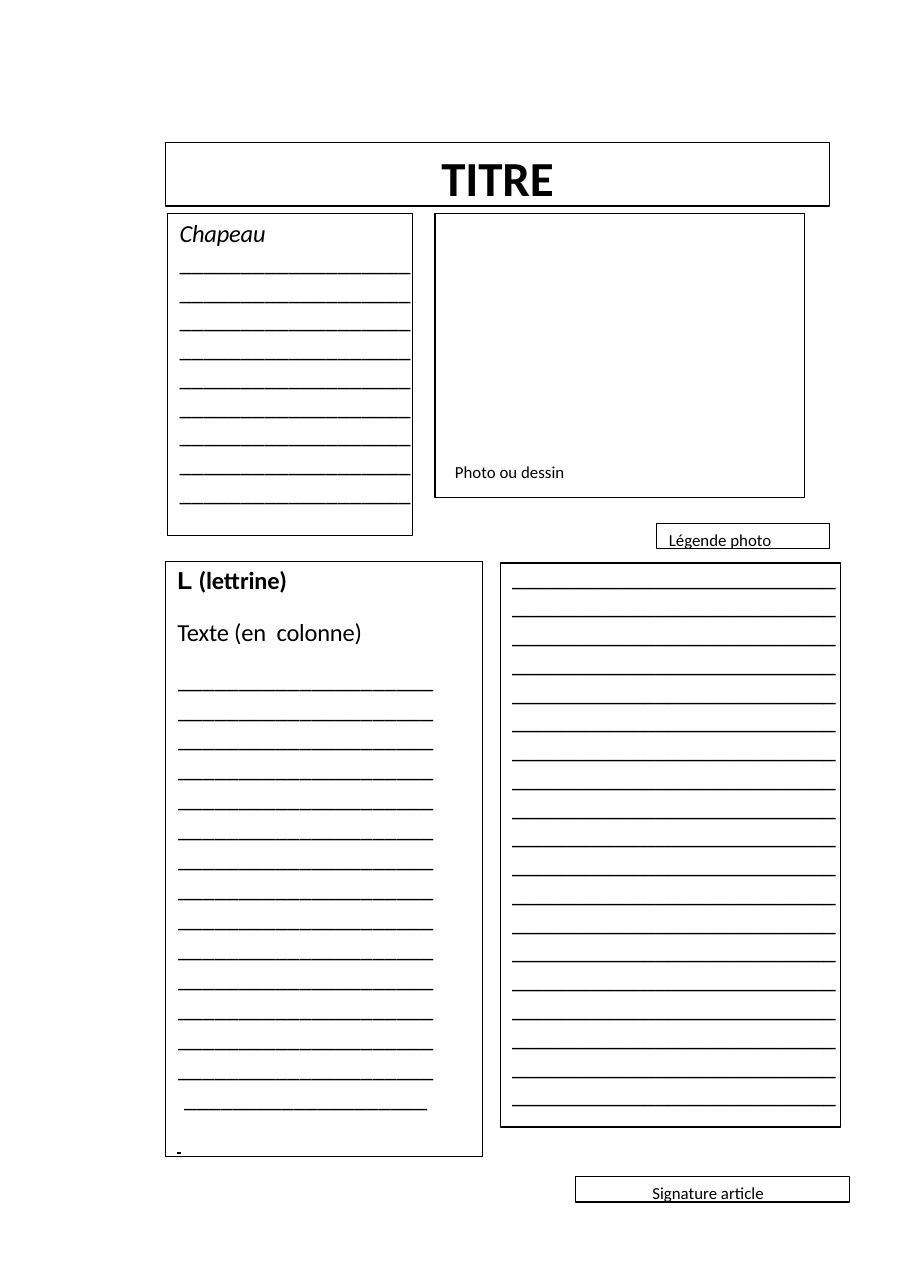
from lxml.etree import SubElement
from pptx import Presentation
from pptx.dml.color import RGBColor
from pptx.enum.shapes import MSO_SHAPE
from pptx.enum.text import MSO_ANCHOR, MSO_AUTO_SIZE, PP_ALIGN
from pptx.oxml.ns import qn
from pptx.util import Cm, Pt

BLACK = RGBColor(0, 0, 0)
EDGE = Pt(0.75)
PAD = 0.28


def put(para, text, size=16, font="Calibri", bold=False, italic=False,
        under=False, track=0, align=PP_ALIGN.LEFT, before=0, lead=1.0):
    """Add a run of text to a paragraph and format both."""
    para.alignment = align
    para.space_before = Pt(before)
    para.line_spacing = lead
    run = para.add_run()
    run.text = text
    face = run.font
    face.name, face.size = font, Pt(size)
    face.bold, face.italic, face.underline = bold, italic, under
    face.color.rgb = BLACK
    run._r.get_or_add_rPr().set("spc", str(track))
    return run


def prep(shape, left=0, top=0):
    """Set up the text frame of a shape and return its first paragraph."""
    frame = shape.text_frame
    frame.word_wrap = True
    frame.auto_size = MSO_AUTO_SIZE.NONE
    frame.vertical_anchor = MSO_ANCHOR.TOP
    frame.margin_left, frame.margin_top = Cm(left), Cm(top)
    frame.margin_right = frame.margin_bottom = 0
    return frame.paragraphs[0]


def edge(shape):
    """Give a shape a thin black outline and no fill."""
    shape.fill.background()
    shape.line.color.rgb = BLACK
    shape.line.width = EDGE


def frame_box(slide, box, left=0, top=0):
    """Draw an outlined box and return its first paragraph."""
    shape = slide.shapes.add_shape(MSO_SHAPE.RECTANGLE, *map(Cm, box))
    shape.shadow.inherit = False
    edge(shape)
    return prep(shape, left, top)


def headline(slide, box):
    """Place the title across the top."""
    title = slide.shapes.title
    title.left, title.top, title.width, title.height = map(Cm, box)
    edge(title)
    put(prep(title, top=0.13), "TITRE", size=32, bold=True, track=-10,
        align=PP_ALIGN.CENTER, before=3.2)


def intro(slide, box):
    """Place the lead paragraph with its writing lines."""
    para = frame_box(slide, box, PAD, 0.13)
    style = dict(before=3.4, lead=0.98)
    put(para, "Chapeau ", italic=True, track=-10, **style)
    put(para, "_" * 19 * 9, **style)


def photo(slide, box):
    """Place the picture frame and the label near its bottom."""
    left, top, _, _ = box
    frame_box(slide, box)
    label = slide.shapes.add_textbox(
        Cm(left + 0.46), Cm(top + 5.69), Cm(3.23), Cm(0.51))
    put(prep(label, top=0.03), "Photo ou dessin", size=11, before=1)


def caption(slide, box, text, left=PAD):
    """Place a small outlined label."""
    put(frame_box(slide, box, left, 0.13), text, size=11, before=3.4)


def rule_cell(cell):
    """Draw the four borders of a cell."""
    props = cell._tc.get_or_add_tcPr()
    for spot, side in enumerate("LRTB"):
        line = props.makeelement(qn(f"a:ln{side}"), {"w": str(EDGE)})
        fill = SubElement(line, qn("a:solidFill"))
        SubElement(fill, qn("a:srgbClr"), val=str(BLACK))
        props.insert(spot, line)


def story(slide, box):
    """Place the first text column as a table of one cell."""
    table = slide.shapes.add_table(1, 1, *map(Cm, box)).table
    table.first_row = table.horz_banding = False
    cell = table.cell(0, 0)
    cell.fill.background()
    rule_cell(cell)
    cell.margin_left, cell.margin_right = Cm(PAD), Cm(1.12)
    cell.margin_top, cell.margin_bottom = Cm(0.1), 0
    frame = cell.text_frame
    head = frame.paragraphs[0]
    put(head, "L ", font="Arial", bold=True)
    put(head, "(lettrine)", bold=True, track=-10, before=2.5)
    put(frame.add_paragraph(), "Texte (en  colonne)", track=-10,
        before=10.9, lead=1.18)
    put(frame.add_paragraph(), "_" * (21 * 14 + 20),
        align=PP_ALIGN.CENTER, before=10.9)
    put(frame.add_paragraph(), " ", size=11, bold=True, under=True, before=14)


def column(slide, box):
    """Place the second text column with its writing lines."""
    put(frame_box(slide, box, PAD), "_" * 27 * 19, track=-10, lead=0.98)


def main():
    """Build the article page."""
    deck = Presentation()
    deck.slide_width, deck.slide_height = Cm(20.98), Cm(29.69)
    slide = deck.slides.add_slide(deck.slide_layouts[5])
    headline(slide, (3.81, 3.28, 15.32, 1.47))
    intro(slide, (3.86, 4.93, 5.66, 7.42))
    photo(slide, (10.03, 4.93, 8.51, 6.53))
    caption(slide, (15.14, 12.07, 3.99, 0.58), "Légende photo")
    story(slide, (3.81, 12.95, 7.32, 13.44))
    column(slide, (11.53, 12.98, 7.85, 13))
    caption(slide, (13.26, 27.13, 6.32, 0.58), "Signature article", 1.78)
    deck.save("out.pptx")


if __name__ == "__main__":
    main()
